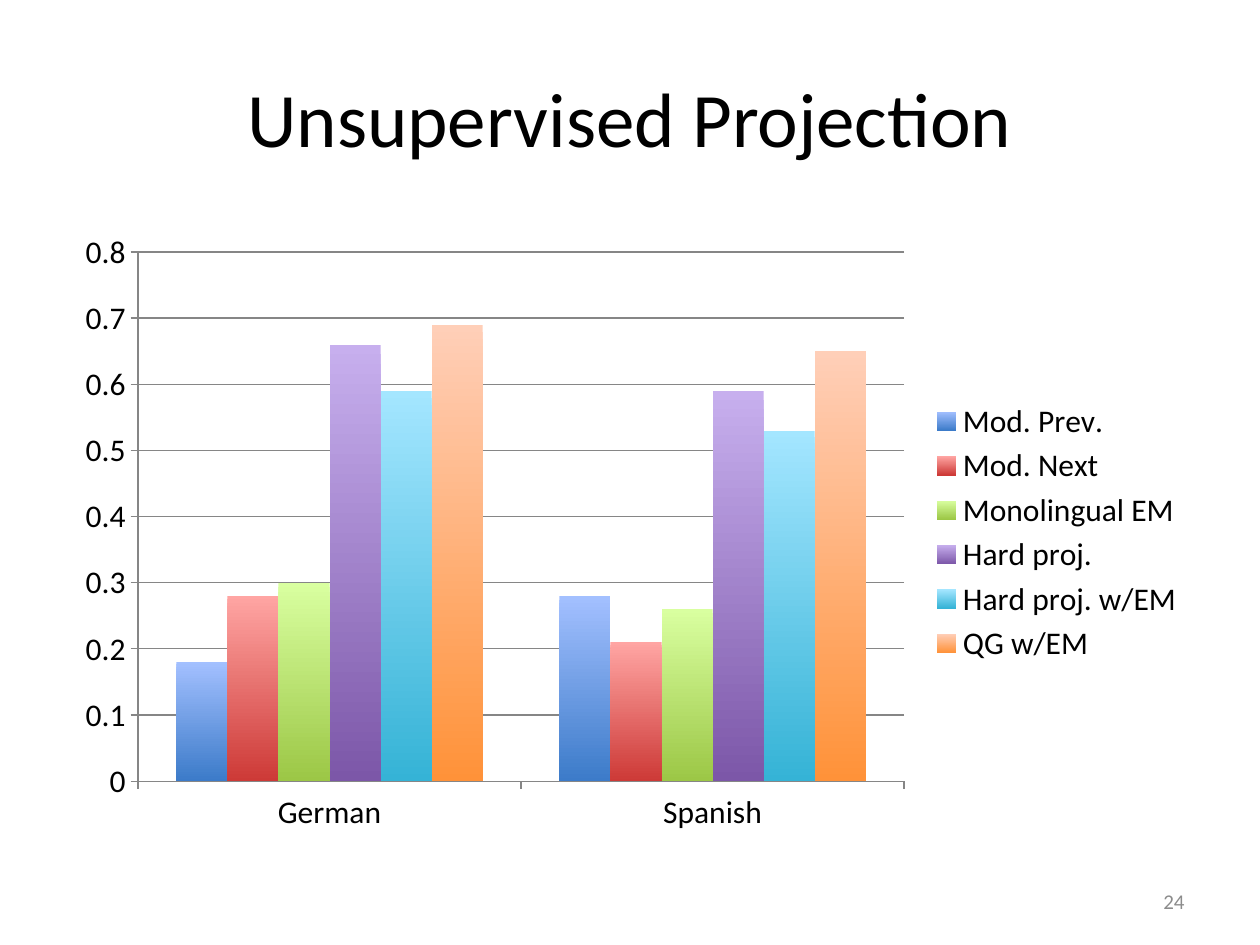
from pptx import Presentation
from pptx.chart.data import CategoryChartData as ChartData
from pptx.dml.color import RGBColor
from pptx.enum.chart import XL_CHART_TYPE as Kind, XL_LEGEND_POSITION as Side
from pptx.enum.chart import XL_TICK_MARK as Tick
from pptx.enum.text import MSO_ANCHOR as Anchor, PP_ALIGN as Align
from pptx.util import Inches, Pt

FONT = "Calibri"
INK = {"text": "000000", "page": "8C8C8C", "line": "868686"}

# Each method: scores by language, then the bar's top and bottom colours
LANGS = ["German", "Spanish"]
BARS = {
    "Mod. Prev.": ([0.18, 0.28], "A3C0FF", "3C7BC9"),
    "Mod. Next": ([0.28, 0.21], "FFA5A3", "CD3A37"),
    "Monolingual EM": ([0.3, 0.26], "D9FFA0", "9CC746"),
    "Hard proj.": ([0.66, 0.59], "C7AFEE", "7C57A8"),
    "Hard proj. w/EM": ([0.59, 0.53], "A4E6FF", "35B3D6"),
    "QG w/EM": ([0.69, 0.65], "FFCFB8", "FF9239"),
}


def style(font, size, color):
    font.name = FONT
    font.size = Pt(size)
    font.color.rgb = RGBColor.from_string(color)


def write(shape, text, size=18, color=INK["text"], align=Align.LEFT):
    frame = shape.text_frame
    frame.word_wrap = True
    frame.vertical_anchor = Anchor.MIDDLE
    para = frame.paragraphs[0]
    para.alignment = align
    run = para.add_run()
    run.text = text
    style(run.font, size, color)


def add_title(slide, box, text):
    title = slide.shapes.title
    title.left, title.top, title.width, title.height = box
    write(title, text, size=44, align=Align.CENTER)


def rule(line):
    line.color.rgb = RGBColor.from_string(INK["line"])
    line.width = Pt(0.75)


def add_bars(slide, box):
    data = ChartData()
    data.categories = LANGS
    for name, (vals, _, _) in BARS.items():
        data.add_series(name, vals)
    chart = slide.shapes.add_chart(Kind.COLUMN_CLUSTERED, *box, data).chart
    chart.has_title = False
    style(chart.font, 18, INK["text"])

    # Axes and grid
    for axis in (chart.category_axis, chart.value_axis):
        axis.major_tick_mark = Tick.OUTSIDE
        axis.minor_tick_mark = Tick.NONE
        rule(axis.format.line)
    scale = chart.value_axis
    scale.minimum_scale, scale.maximum_scale, scale.major_unit = 0, 0.8, 0.1
    scale.tick_labels.number_format = "General"
    scale.tick_labels.number_format_is_linked = False
    scale.has_major_gridlines = True
    rule(scale.major_gridlines.format.line)

    # Legend
    chart.has_legend = True
    chart.legend.position = Side.RIGHT
    chart.legend.include_in_layout = False

    # Shaded bars
    plot = chart.plots[0]
    plot.gap_width, plot.overlap = 150, 0
    plot.vary_by_categories = False
    for bar, (_, *shades) in zip(plot.series, BARS.values()):
        fill = bar.format.fill
        fill.gradient()
        fill.gradient_angle = 270
        for stop, shade, pos in zip(fill.gradient_stops, shades, (0, 1)):
            stop.color.rgb = RGBColor.from_string(shade)
            stop.position = pos


def add_page(slide, box, number):
    write(slide.shapes.add_textbox(*box), number, size=12,
          color=INK["page"], align=Align.RIGHT)


def area(*sides):
    return [Inches(side) for side in sides]


def main():
    deck = Presentation()
    deck.slide_width, deck.slide_height = Inches(10), Inches(7.5)
    slide = deck.slides.add_slide(deck.slide_layouts[5])
    add_title(slide, area(0.5, 0.3, 9, 1.25), "Unsupervised Projection")
    add_bars(slide, area(0.5, 1.75, 9, 4.95))
    add_page(slide, area(7.17, 6.95, 2.33, 0.4), "24")
    deck.save("out.pptx")


if __name__ == "__main__":
    main()
